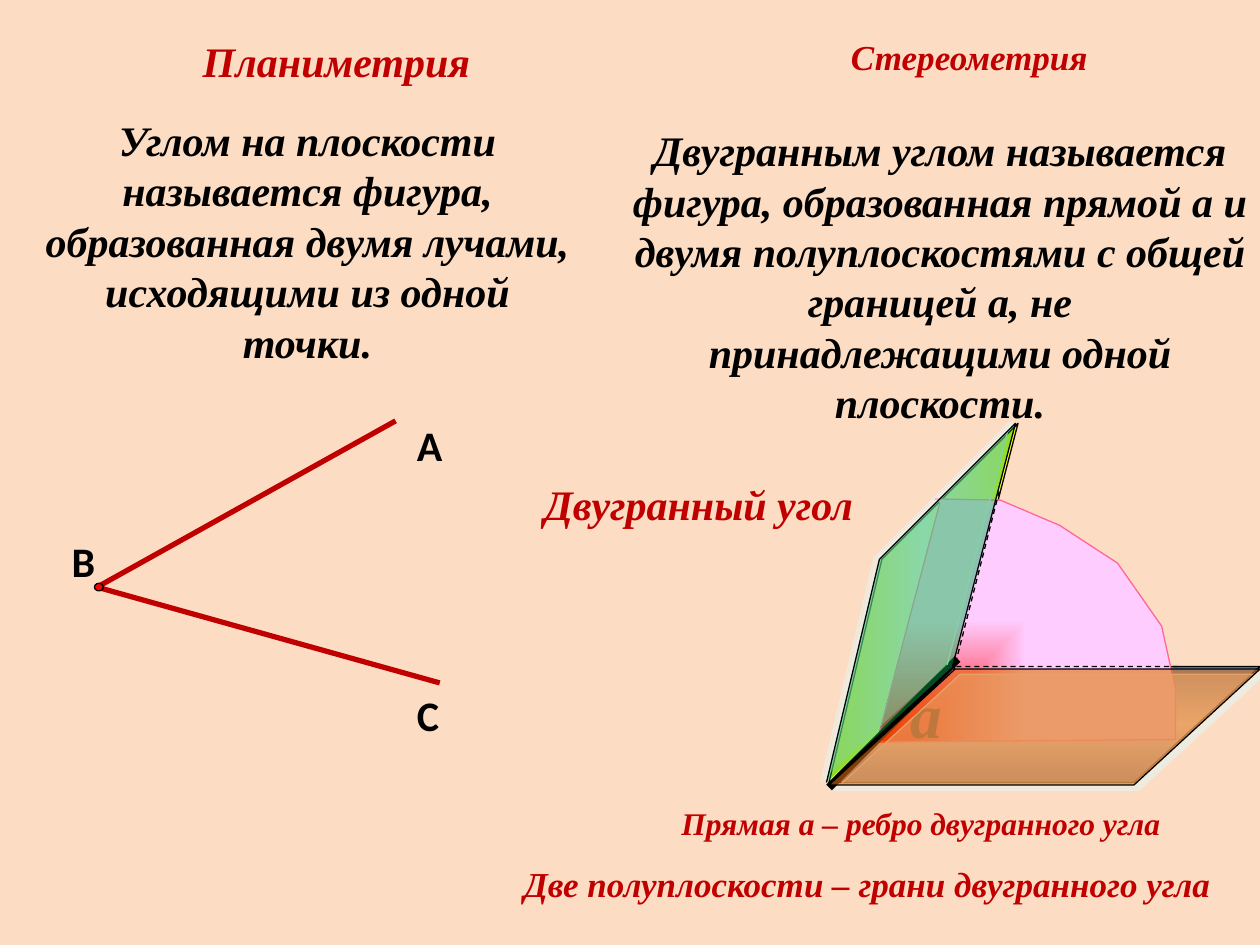
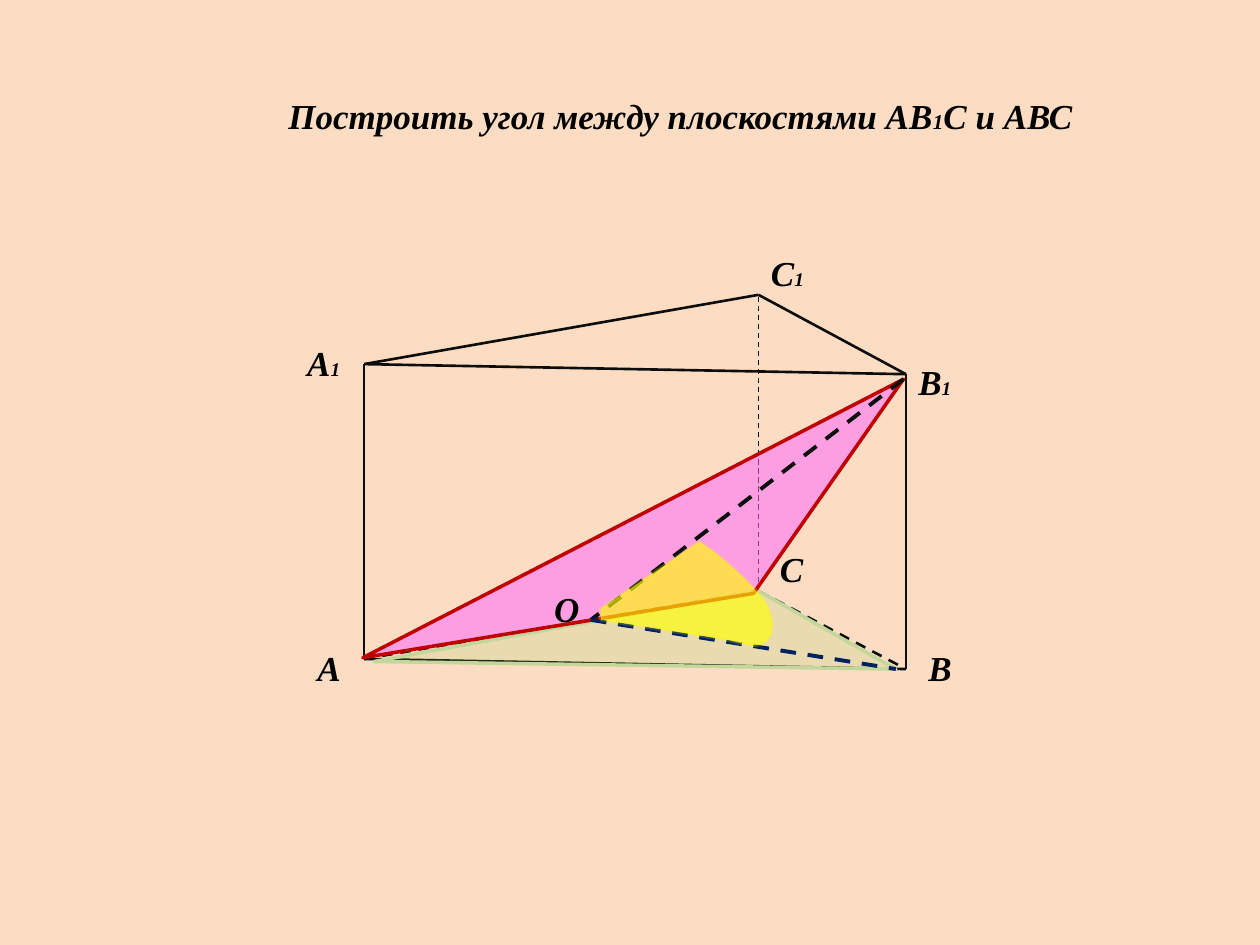
from dataclasses import dataclass
from itertools import groupby
from lxml.etree import SubElement
from pptx import Presentation
from pptx.dml.color import RGBColor
from pptx.enum.dml import MSO_LINE
from pptx.enum.shapes import MSO_CONNECTOR, MSO_SHAPE
from pptx.enum.text import MSO_AUTO_SIZE, PP_ALIGN
from pptx.oxml import parse_xml
from pptx.oxml.ns import nsdecls, qn
from pptx.util import Inches, Pt


@dataclass(frozen=True)
class Theme:
    background: str = "FCDDC3"
    ink: str = "000000"
    edge: str = "0D0D0D"
    accent: str = "C00000"
    glow: str = "EEECE1"
    serif: str = "Times New Roman"
    sans: str = "Calibri"
    large: int = 24
    medium: int = 20
    small: int = 18
    edge_name: int = 36
    title_index: int = 12
    vertex_index: int = 11


THEME = Theme()
CENTRE = (50, 50, 50, 50)
BOTTOM_LEFT = (0, 100, 100, 0)


def add_label(page, frame, text, size, color=THEME.ink, font=THEME.serif,
              align=PP_ALIGN.LEFT, wrap=False, index_size=THEME.vertex_index):
    """Add bold text; digits become small indices, and serif text is italic."""
    box = page.shapes.add_textbox(*map(Inches, frame))
    box.text_frame.word_wrap = wrap
    box.text_frame.auto_size = MSO_AUTO_SIZE.SHAPE_TO_FIT_TEXT
    paragraph = box.text_frame.paragraphs[0]
    paragraph.alignment = align
    for is_index, letters in groupby(text, str.isdigit):
        span = paragraph.add_run()
        span.text = "".join(letters)
        span.font.size = Pt(index_size if is_index else size)
        span.font.name = font
        span.font.bold = True
        span.font.italic = font == THEME.serif
        span.font.color.rgb = RGBColor.from_string(color)


def draw_path(page, points, color, width, dashed=False, closed=False, fill=None,
              opacity=100, line_opacity=100, gradient=None, shadow=None):
    """Join points given in inches: two make a connector, more make a freeform.

    gradient is (inner colour, outer colour, focus); shadow is (distance, angle).
    """
    start, *rest = [tuple(map(Inches, point)) for point in points]
    if len(points) == 2:
        shape = page.shapes.add_connector(MSO_CONNECTOR.STRAIGHT, *start, *rest[0])
    else:
        builder = page.shapes.build_freeform(*start)
        builder.add_line_segments(rest, close=closed)
        shape = builder.convert_to_shape()
        shape.fill.background()
    properties = shape._element.spPr
    if fill:
        shape.fill.solid()
        shape.fill.fore_color.rgb = RGBColor.from_string(fill)
    if gradient:
        inner, outer, focus = gradient
        sides = " ".join(f'{side}="{share * 1000}"' for side, share in zip("ltrb", focus))
        properties.replace(properties.find(qn("a:noFill")), parse_xml(
            f'<a:gradFill {nsdecls("a")} rotWithShape="1"><a:gsLst>'
            f'<a:gs pos="0"><a:srgbClr val="{inner}"/></a:gs>'
            f'<a:gs pos="100000"><a:srgbClr val="{outer}"/></a:gs></a:gsLst>'
            f'<a:path path="rect"><a:fillToRect {sides}/></a:path></a:gradFill>'))
    shape.line.color.rgb = RGBColor.from_string(color)
    shape.line.width = Pt(width)
    if dashed:
        shape.line.dash_style = MSO_LINE.DASH
    for holder, share in (("a:solidFill", opacity), ("a:ln/a:solidFill", line_opacity)):
        if share < 100:
            tags = "/".join(qn(tag) for tag in f"{holder}/a:srgbClr".split("/"))
            SubElement(properties.find(tags), qn("a:alpha"), val=str(share * 1000))
    effects = SubElement(properties, qn("a:effectLst"))
    if shadow:
        distance, angle = shadow
        cast = SubElement(effects, qn("a:outerShdw"), dist=str(Pt(distance)),
                          dir=str(angle * 60000), algn="ctr", rotWithShape="0")
        SubElement(cast, qn("a:srgbClr"), val=THEME.glow)


deck = Presentation()
deck.slide_width, deck.slide_height = Inches(10), Inches(7.5)
pages = []
for _ in range(2):
    page = deck.slides.add_slide(deck.slide_layouts[6])
    page.background.fill.solid()
    page.background.fill.fore_color.rgb = RGBColor.from_string(THEME.background)
    pages.append(page)
definitions, prism = pages

# Plane angle and dihedral angle
floor = [(6.58, 6.21), (7.58, 5.29), (10, 5.29), (9, 6.21)]
wall = [(7.58, 5.29), (8.08, 3.36), (7, 4.44), (6.58, 6.21)]
sector = [(7.46, 3.99), (6.96, 5.89), (9.33, 5.87), (9.33, 5.47), (9.22, 4.97),
          (8.87, 4.47), (8.41, 4.17), (7.94, 3.97), (7.42, 3.96)]
floor_shadow, wall_shadow = (4.2, 45), (3.2, 198)

draw_path(definitions, floor, THEME.ink, 0.75, closed=True,
          gradient=("FFFFFF", "4F81BD", CENTRE), shadow=floor_shadow)
draw_path(definitions, wall, THEME.ink, 0.75,
          gradient=("FFFFFF", "FFFF00", CENTRE), shadow=wall_shadow)
draw_path(definitions, sector, "FF6699", 0.75,
          gradient=("FF0000", "FFCCFF", BOTTOM_LEFT))

add_label(definitions, (1.48, 0.23, 2.35, 0.51), "Планиметрия", THEME.large,
          THEME.accent, align=PP_ALIGN.RIGHT)
add_label(definitions, (6.64, 0.23, 2.09, 0.44), "Стереометрия", THEME.medium,
          THEME.accent, align=PP_ALIGN.RIGHT)
add_label(definitions, (0.23, 0.86, 4.42, 2.12),
          "Углом на плоскости называется фигура, образованная двумя лучами, "
          "исходящими из одной точки.",
          THEME.large, align=PP_ALIGN.CENTER, wrap=True)
add_label(definitions, (4.22, 3.75, 3.17, 0.5), "Двугранный угол", THEME.large,
          THEME.accent, wrap=True)

draw_path(definitions, [(3.14, 3.34), (0.77, 4.66), (3.49, 5.42)], THEME.accent, 3)
vertex = definitions.shapes.add_shape(
    MSO_SHAPE.OVAL, Inches(0.75), Inches(4.63), Inches(0.07), Inches(0.06))
vertex.shadow.inherit = False
vertex.fill.solid()
vertex.fill.fore_color.rgb = RGBColor.from_string("FF0000")
vertex.line.color.rgb = RGBColor.from_string(THEME.ink)
vertex.line.width = Pt(0.75)
for letter, left, top in (("А", 3.21, 3.28), ("В", 0.47, 4.2), ("С", 3.21, 5.42)):
    add_label(definitions, (left, top, 0.42, 0.37), letter, THEME.large,
              font=THEME.sans, wrap=True)

draw_path(definitions, [(9.35, 5.29), (7.57, 5.29), (6.96, 5.87)], THEME.ink, 0.75,
          dashed=True)
draw_path(definitions, [(7.93, 3.9), (7.57, 5.32)], THEME.ink, 0.75, dashed=True)
add_label(definitions, (4.92, 0.94, 5.08, 2.52),
          "Двугранным углом называется фигура, образованная прямой a и двумя "
          "полуплоскостями с общей границей a, не принадлежащими одной плоскости.",
          THEME.large, align=PP_ALIGN.CENTER, wrap=True)
draw_path(definitions, [(7.6, 5.23), (6.58, 6.25)], THEME.ink, 4.5)
add_label(definitions, (7.13, 5.31, 0.45, 0.71), "а", THEME.edge_name)
add_label(definitions, (5.31, 6.33, 4.04, 0.4), "Прямая a – ребро двугранного угла",
          THEME.small, THEME.accent)
add_label(definitions, (4.06, 6.8, 5.69, 0.44),
          "Две полуплоскости – грани двугранного угла", THEME.medium, THEME.accent)

draw_path(definitions, [(x - 0.02, y) for x, y in wall], THEME.ink, 0.75,
          fill="00B050", opacity=44, shadow=wall_shadow)
draw_path(definitions, [(x, y + 0.02) for x, y in floor], THEME.ink, 0.75, closed=True,
          fill="E46C0A", opacity=58, shadow=floor_shadow)

# Angle between two planes of a prism
A, B, C = (2.89, 5.23), (7.19, 5.31), (6.02, 4.69)
A1, B1, C1 = (2.89, 2.89), (7.19, 2.97), (6.02, 2.34)
O, apex, base_end = (4.69, 4.92), (7.17, 3.01), (7.11, 5.31)

for start, end, width, hidden in (
        (A, C, 1.5, True), (C, B, 1.5, True), (A, B, 1.5, False),
        (A1, C1, 1.5, False), (C1, B1, 1.5, False), (A1, B1, 1.5, False),
        (C, C1, 0.75, True), (A1, A, 0.75, False), (B1, B, 0.75, False)):
    draw_path(prism, [start, end], THEME.edge, width, dashed=hidden)

add_label(prism, (2.19, 0.7, 6.53, 0.44), "Построить угол между плоскостями АВ1С и АВС",
          THEME.medium, index_size=THEME.title_index)
for name, left, top in (("А", 2.42, 5.08), ("А1", 2.34, 2.66), ("В", 7.27, 5.08),
                        ("В1", 7.19, 2.81), ("С", 6.09, 4.3), ("С1", 6.02, 1.95)):
    add_label(prism, (left, top, 0.31 + 0.08 * len(name), 0.44), name, THEME.medium)

draw_path(prism, [(2.97, 5.25), C, base_end], "C3D69B", 2, closed=True,
          fill="92D050", opacity=17)
draw_path(prism, [(2.88, 5.22), apex, (5.98, 4.71)], THEME.accent, 2, closed=True,
          fill="FF66FF", opacity=53)
draw_path(prism, [apex, O], THEME.edge, 2.25, dashed=True)
draw_path(prism, [O, base_end], "002060", 2.25, dashed=True)
add_label(prism, (4.3, 4.61, 0.4, 0.44), "О", THEME.medium)

angle_mark = [(5.55, 4.3), (4.77, 4.83), (4.77, 4.92), (5.78, 5.08)]
curves = [((5.99, 5.14), (6.05, 5.13), (6.09, 5.08)),
          ((6.14, 5.03), (6.15, 4.89), (6.06, 4.76)),
          ((5.96, 4.63), (5.75, 4.43), (5.55, 4.3))]
STEPS = 8
for control_1, control_2, end in curves:
    start = angle_mark[-1]
    for step in range(1, STEPS + 1):
        t = step / STEPS
        angle_mark.append(tuple(
            (1 - t) ** 3 * p + 3 * (1 - t) ** 2 * t * q + 3 * (1 - t) * t ** 2 * r + t ** 3 * s
            for p, q, r, s in zip(start, control_1, control_2, end)))
draw_path(prism, angle_mark, "FFFF00", 2, closed=True, fill="FFFF00", opacity=63,
          line_opacity=20)

deck.save("out.pptx")
